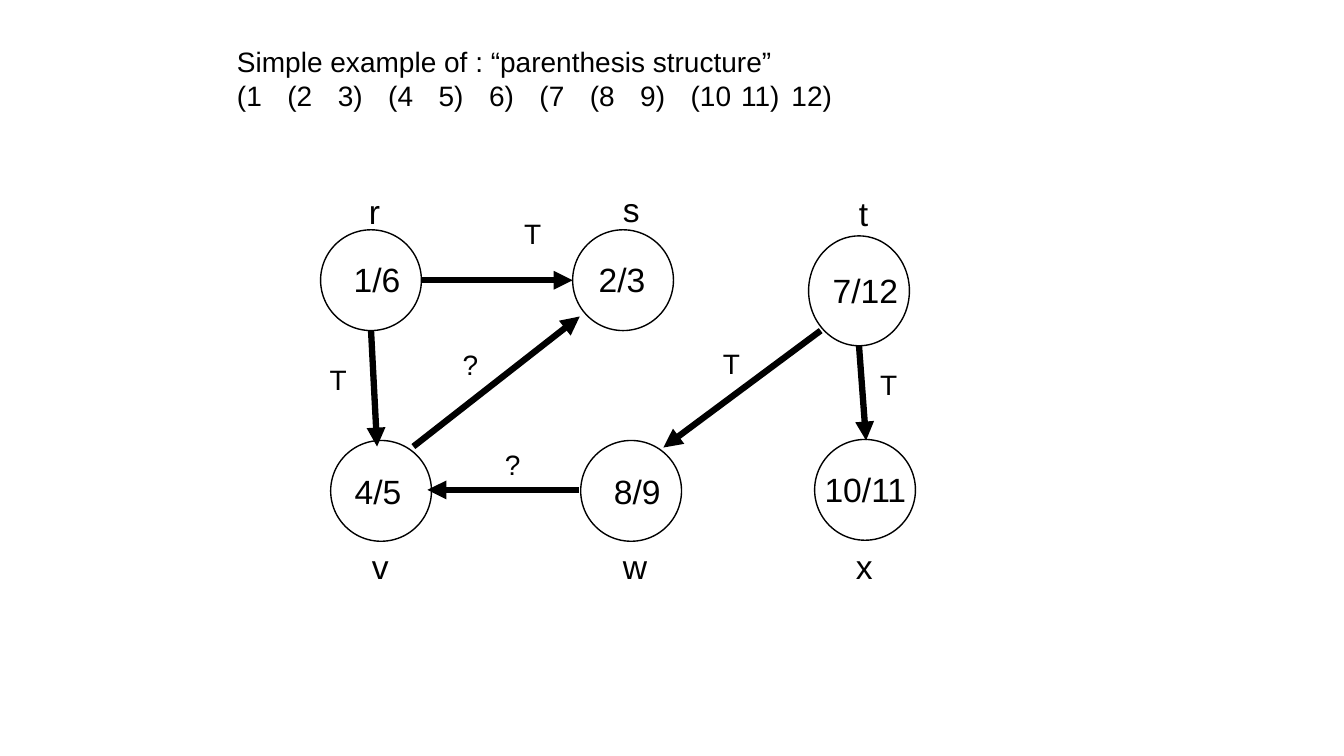
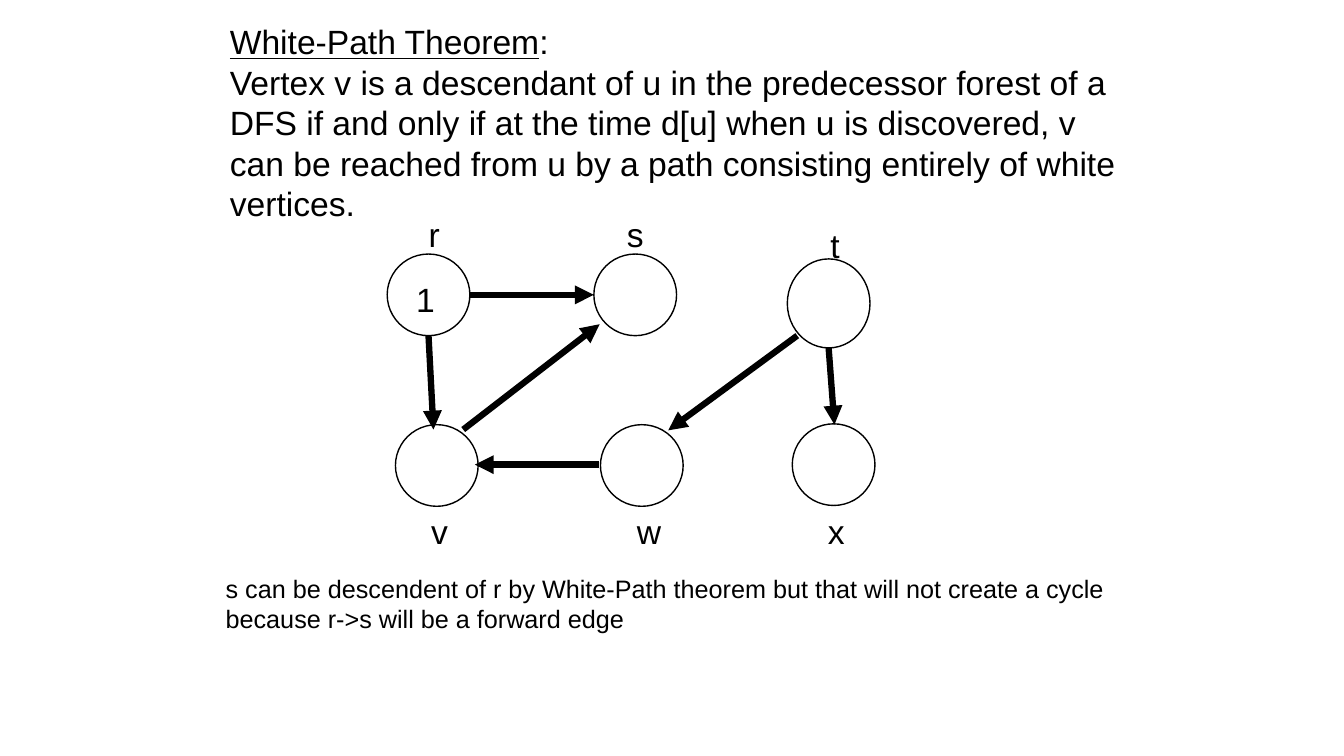
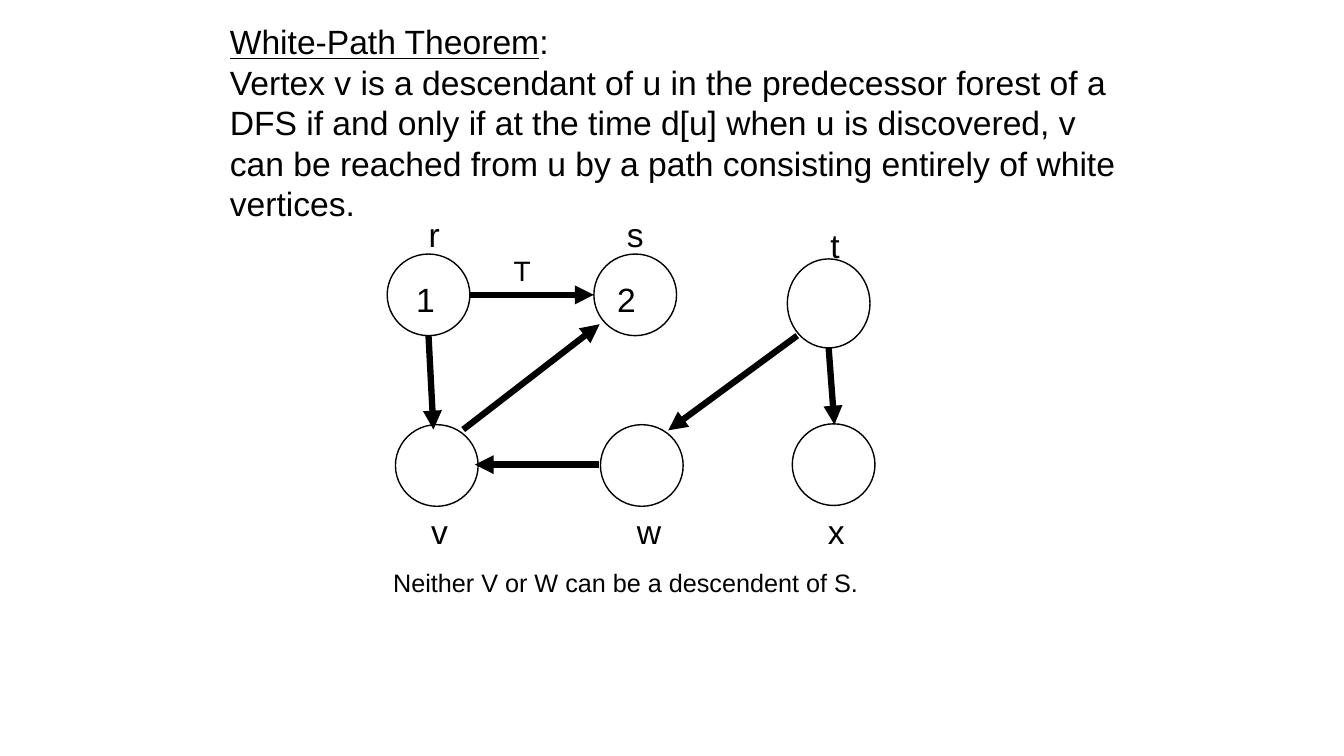
from collections import namedtuple

from lxml.etree import SubElement
from pptx import Presentation
from pptx.dml.color import RGBColor
from pptx.enum.shapes import MSO_CONNECTOR as Connector, MSO_SHAPE as Shape
from pptx.enum.text import MSO_ANCHOR as Anchor, MSO_AUTO_SIZE as AutoSize, PP_ALIGN as Align
from pptx.oxml.ns import qn
from pptx.util import Inches, Pt

BLACK = RGBColor(0x00, 0x00, 0x00)
WHITE = RGBColor(0xFF, 0xFF, 0xFF)
FONT = "Arial"
WIDTH, HEIGHT = 13.33, 7.5
LARGE, MEDIUM, SMALL = 24, 20, 18

Grid = namedtuple("Grid", "left top column row")
PERCENT = Grid(0, 0, WIDTH / 100, HEIGHT / 100)
LARGE_GRAPH = Grid(3.18, 2.28, 1, 1)
SMALL_GRAPH = Grid(3.84, 2.52, 0.82, 0.81)

VERTICES = [
    (0, 0, 1, 1), (2.5, 0, 1, 1), (4.84, 0.06, 1, 1.09),
    (0.1, 2.09, 1, 1), (2.58, 2.09, 1, 1), (4.9, 2.08, 1, 1),
]
EDGES = [
    (1, 0.5, 2.5, 0.5), (0.5, 1, 0.56, 2.15), (0.92, 2.15, 2.57, 0.86),
    (2.56, 2.58, 1.06, 2.58), (4.96, 1, 3.4, 2.16), (5.34, 1.15, 5.41, 2.09),
]
SHARED_NAMES = [("t", 5.24, -0.42), ("v", 0.41, 3.09), ("w", 2.9, 3.09), ("x", 5.21, 3.09)]
LARGE_NAMES = [("r", 0.38, -0.44), ("s", 2.9, -0.45)]
SMALL_NAMES = [("r", 0.38, -0.55), ("s", 2.78, -0.55)]
TIMES = [
    ("1/6", 0.23, 0.24), ("2/3", 2.66, 0.24), ("7/12", 4.98, 0.35),
    ("4/5", 0.24, 2.34), ("8/9", 2.81, 2.34), ("10/11", 4.9, 2.32),
]
EDGE_MARKS = [
    ("T", 1.92, -0.18), ("T", -0.01, 1.27), ("?", 1.31, 1.12),
    ("?", 1.73, 2.11), ("T", 3.89, 1.11), ("T", 5.45, 1.32),
]
FIRST_TIME = ("1", 0.23, 0.25)
SECOND_TIME = ("2", 2.66, 0.25)

PARENTHESES = ["(1", "(2", "3)", "(4", "5)", "6)", "(7", "(8", "9)", "(10", "11)", "12)"]
TAB_STOPS = [0.63, 1.26, 1.9, 2.53, 3.09, 3.72, 4.28, 4.9, 5.47, 6.17, 6.87]
THEOREM = (
    "Vertex v is a descendant of u in the predecessor forest of a DFS if and only if "
    "at the time d[u] when u is discovered, v can be reached from u by a path "
    "consisting entirely of white vertices."
)


def locate(grid, column, row):
    """Return the slide position of a grid point."""
    return Inches(grid.left + column * grid.column), Inches(grid.top + row * grid.row)


def frame(grid, column, row, columns, rows):
    """Return left, top, width and height of a grid area."""
    size = Inches(columns * grid.column), Inches(rows * grid.row)
    return *locate(grid, column, row), *size


def add_span(para, text, size, underline=None):
    """Add one formatted run to a paragraph."""
    span = para.add_run()
    span.text = text
    font = span.font
    font.name, font.size, font.underline = FONT, Pt(size), underline
    font.color.rgb = BLACK


def fill_placeholder(box, area, spans):
    """Move a placeholder, write its runs and return its plain paragraph."""
    box.left, box.top, box.width, box.height = frame(PERCENT, *area)
    text = box.text_frame
    text.word_wrap, text.auto_size = True, AutoSize.NONE
    text.vertical_anchor = Anchor.TOP
    para = text.paragraphs[0]
    para.alignment, para.space_before = Align.LEFT, Pt(0)
    layout = para._p.get_or_add_pPr()
    layout.set("marL", "0")
    layout.set("indent", "0")
    SubElement(layout, qn("a:buNone"))
    for span in spans:
        add_span(para, *span)
    return para


def add_tab_stops(para, stops):
    """Give a paragraph left tab stops in inches."""
    tabs = SubElement(para._p.get_or_add_pPr(), qn("a:tabLst"))
    for stop in stops:
        SubElement(tabs, qn("a:tab"), pos=str(Inches(stop)), algn="l")


def add_text(page, text, area, size):
    """Add a wrapped text box with one run."""
    box = page.shapes.add_textbox(*area)
    box.text_frame.word_wrap = True
    add_span(box.text_frame.paragraphs[0], text, size)


def add_labels(page, grid, labels, size):
    """Add short labels at grid points."""
    for text, column, row in labels:
        width, height = Inches(0.25 + 0.16 * len(text)), Inches(0.1 + size / 60)
        add_text(page, text, (*locate(grid, column, row), width, height), size)


def add_vertex(page, area):
    """Add one white vertex circle."""
    circle = page.shapes.add_shape(Shape.OVAL, *area)
    circle.shadow.inherit = False
    circle.fill.solid()
    circle.fill.fore_color.rgb = WHITE
    circle.line.color.rgb = BLACK
    circle.line.width = Pt(1)


def add_arrow(page, start, end):
    """Add one thick arrow between two points."""
    arrow = page.shapes.add_connector(Connector.STRAIGHT, *start, *end)
    arrow.line.color.rgb = BLACK
    arrow.line.width = Pt(4.5)
    SubElement(arrow.line._get_or_add_ln(), qn("a:tailEnd"), type="triangle")
    SubElement(arrow._element.spPr, qn("a:effectLst"))


def add_graph(page, grid, labels):
    """Draw the six vertices, their edges and large labels."""
    for vertex in VERTICES:
        add_vertex(page, frame(grid, *vertex))
    for edge in EDGES:
        add_arrow(page, locate(grid, *edge[:2]), locate(grid, *edge[2:]))
    add_labels(page, grid, SHARED_NAMES + labels, LARGE)


def add_page(deck):
    """Add a page with title and body placeholders."""
    return deck.slides.add_slide(deck.slide_layouts[1])


def add_parenthesis_page(deck):
    """Build the parenthesis structure page."""
    page = add_page(deck)
    title = "Simple example of : “parenthesis structure”"
    fill_placeholder(page.shapes.title, (16.88, 5.2, 68.12, 5.87), [(title, MEDIUM)])
    sequence = "\t".join(PARENTHESES)
    para = fill_placeholder(
        page.placeholders[1], (16.88, 9.67, 68.12, 5.87), [(sequence, MEDIUM)])
    add_tab_stops(para, TAB_STOPS)
    add_graph(page, LARGE_GRAPH, LARGE_NAMES + TIMES)
    add_labels(page, LARGE_GRAPH, EDGE_MARKS, MEDIUM)


def add_theorem_page(deck, times, marks, note, note_area):
    """Build a White-Path theorem page with its graph and note."""
    page = add_page(deck)
    title = [("White-Path Theorem", LARGE, True), (":", LARGE)]
    fill_placeholder(page.shapes.title, (16.35, 2.13, 68.79, 6.67), title)
    fill_placeholder(page.placeholders[1], (16.35, 7.5, 68.79, 22.93), [(THEOREM, LARGE)])
    add_graph(page, SMALL_GRAPH, SMALL_NAMES + times)
    add_labels(page, SMALL_GRAPH, marks, MEDIUM)
    add_text(page, note, frame(PERCENT, *note_area), SMALL)


def main():
    """Build and save the deck."""
    deck = Presentation()
    deck.slide_width, deck.slide_height = Inches(WIDTH), Inches(HEIGHT)
    add_parenthesis_page(deck)
    add_theorem_page(
        deck, [FIRST_TIME], [],
        "s can be descendent of r by White-Path theorem but that will not create "
        "a cycle because r->s will be a forward edge",
        (16.05, 75.2, 67.22, 9.47))
    add_theorem_page(
        deck, [FIRST_TIME, SECOND_TIME], [("T", 1.41, -0.07)],
        "Neither V or W can be a descendent of S.",
        (28.51, 74.4, 36.98, 5.33))
    deck.save("out.pptx")


if __name__ == "__main__":
    main()
